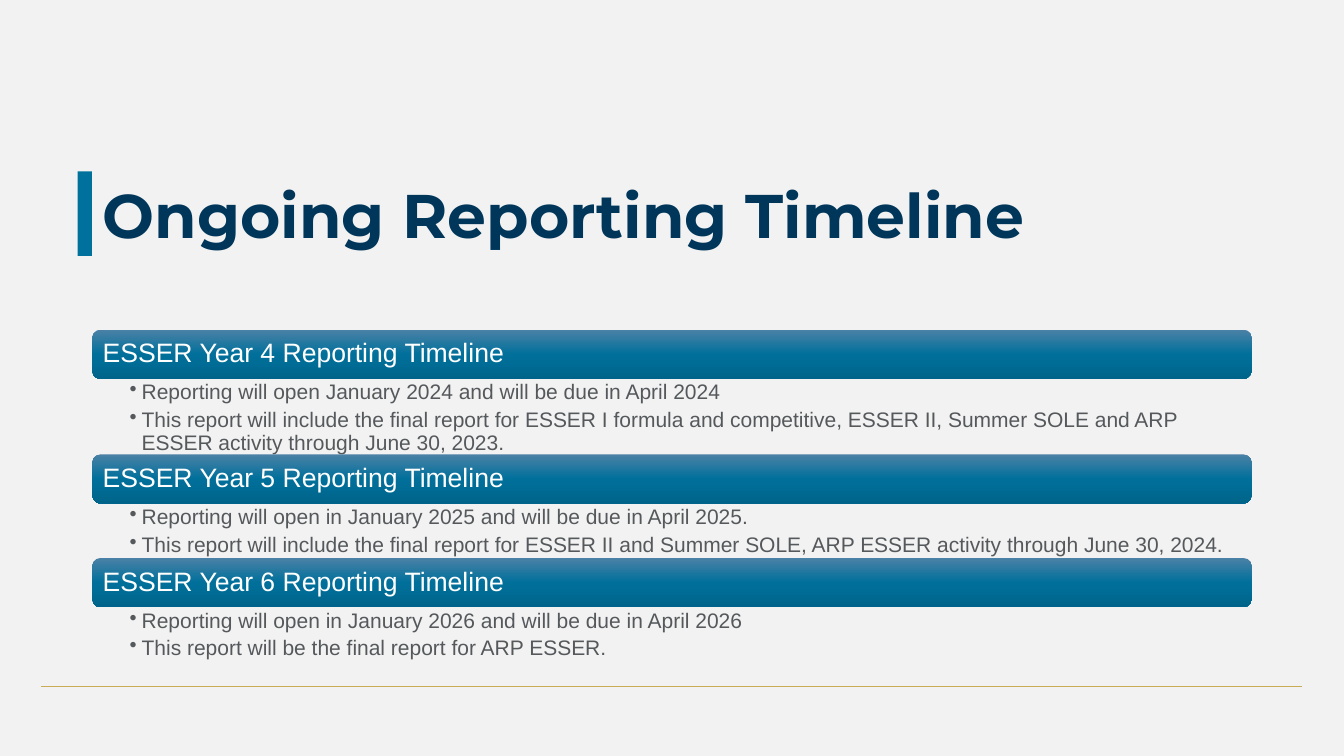
from copy import deepcopy

from lxml.etree import SubElement
from pptx import Presentation
from pptx.dml.color import RGBColor
from pptx.enum.shapes import MSO_CONNECTOR, MSO_SHAPE
from pptx.enum.text import MSO_ANCHOR, PP_ALIGN
from pptx.oxml.ns import qn
from pptx.util import Cm, Pt

TITLE = "Ongoing Reporting Timeline"
YEARS = [
    ("ESSER Year 4 Reporting Timeline", 1.9, [
        "Reporting will open January 2024 and will be due in April 2024",
        "This report will include the final report for ESSER I formula and competitive, "
        "ESSER II, Summer SOLE and ARP ESSER activity through June 30, 2023.",
    ]),
    ("ESSER Year 5 Reporting Timeline", 1.37, [
        "Reporting will open in January 2025 and will be due in April 2025.",
        "This report will include the final report for ESSER II and Summer SOLE, "
        "ARP ESSER activity through June 30, 2024.",
    ]),
    ("ESSER Year 6 Reporting Timeline", 1.37, [
        "Reporting will open in January 2026 and will be due in April 2026",
        "This report will be the final report for ARP ESSER.",
    ]),
]
COLORS = {
    "background": "F2F2F2", "rule": "CAAB57", "accent": "00719C", "title": "00365A",
    "bar_top": "4B81A6", "bar_middle": "00709B", "bar_bottom": "00648A",
    "heading": "FFFFFF", "detail": "55595C",
}
LEFT, WIDTH = 2.33, 29.21
FIRST_TOP, BAR_HEIGHT = 8.31, 1.24


def rgb(name):
    return RGBColor.from_string(COLORS[name])


def style(paragraph, face, size, color, bold=False):
    paragraph.alignment = PP_ALIGN.LEFT
    paragraph.line_spacing = 0.9
    font = paragraph.font
    font.name, font.size, font.bold = face, Pt(size), bold
    font.color.rgb = rgb(color)


def set_frame(frame, anchor, left, top, right, bottom):
    frame.word_wrap = True
    frame.vertical_anchor = anchor
    frame.margin_left, frame.margin_top = Cm(left), Cm(top)
    frame.margin_right, frame.margin_bottom = Cm(right), Cm(bottom)


def add_heading(slide, heading, top):
    bar = slide.shapes.add_shape(
        MSO_SHAPE.ROUNDED_RECTANGLE, Cm(LEFT), Cm(top), Cm(WIDTH), Cm(BAR_HEIGHT))
    bar.shadow.inherit = False
    bar.line.fill.background()
    bar.fill.gradient()
    bar.fill.gradient_angle = 270
    first_stop = bar._element.spPr.find(".//" + qn("a:gs"))
    first_stop.addnext(deepcopy(first_stop))
    shades = ("bar_top", "bar_middle", "bar_bottom")
    for stop, shade, position in zip(bar.fill.gradient_stops, shades, (0, 0.5, 1)):
        stop.color.rgb = rgb(shade)
        stop.position = position
    set_frame(bar.text_frame, MSO_ANCHOR.MIDDLE, 0.2, 0.1, 0.2, 0.1)
    bar.text_frame.text = heading
    style(bar.text_frame.paragraphs[0], "Arial", 19, "heading")


def add_details(slide, details, top, height):
    box = slide.shapes.add_textbox(Cm(LEFT), Cm(top), Cm(WIDTH), Cm(height))
    frame = box.text_frame
    set_frame(frame, MSO_ANCHOR.TOP, 0.94, 0.07, 0.38, 0.07)
    frame.text = "\n".join(details)
    for paragraph in frame.paragraphs:
        properties = paragraph._p.get_or_add_pPr()
        properties.set("marL", str(Cm(0.3)))
        properties.set("indent", str(Cm(-0.3)))
        SubElement(properties, qn("a:buChar"), char="•")
        paragraph.level = 1
        paragraph.space_after = Pt(3.5)
        style(paragraph, "Arial", 15, "detail")


def main():
    deck = Presentation()
    deck.slide_width, deck.slide_height = Cm(33.87), Cm(19.05)
    slide = deck.slides.add_slide(deck.slide_layouts[5])
    slide.background.fill.solid()
    slide.background.fill.fore_color.rgb = rgb("background")

    rule = slide.shapes.add_connector(
        MSO_CONNECTOR.STRAIGHT, Cm(1.04), Cm(17.3), Cm(32.82), Cm(17.3))
    rule.line.color.rgb = rgb("rule")
    rule.line.width = Pt(1)
    SubElement(rule._element.spPr, qn("a:effectLst"))

    accent = slide.shapes.add_shape(
        MSO_SHAPE.RECTANGLE, Cm(1.96), Cm(4.32), Cm(0.36), Cm(2.13))
    accent.shadow.inherit = False
    accent.fill.solid()
    accent.fill.fore_color.rgb = rgb("accent")
    accent.line.fill.background()

    title = slide.shapes.title
    title.left, title.top = Cm(LEFT), Cm(3.66)
    title.width, title.height = Cm(WIDTH), Cm(3.68)
    set_frame(title.text_frame, MSO_ANCHOR.MIDDLE, 0.25, 0.13, 0.25, 0.13)
    title.text_frame.text = TITLE
    style(title.text_frame.paragraphs[0], "Montserrat", 44, "title", bold=True)

    top = FIRST_TOP
    for heading, details_height, details in YEARS:
        add_heading(slide, heading, top)
        add_details(slide, details, top + BAR_HEIGHT, details_height)
        top += BAR_HEIGHT + details_height

    deck.save("out.pptx")


if __name__ == "__main__":
    main()
